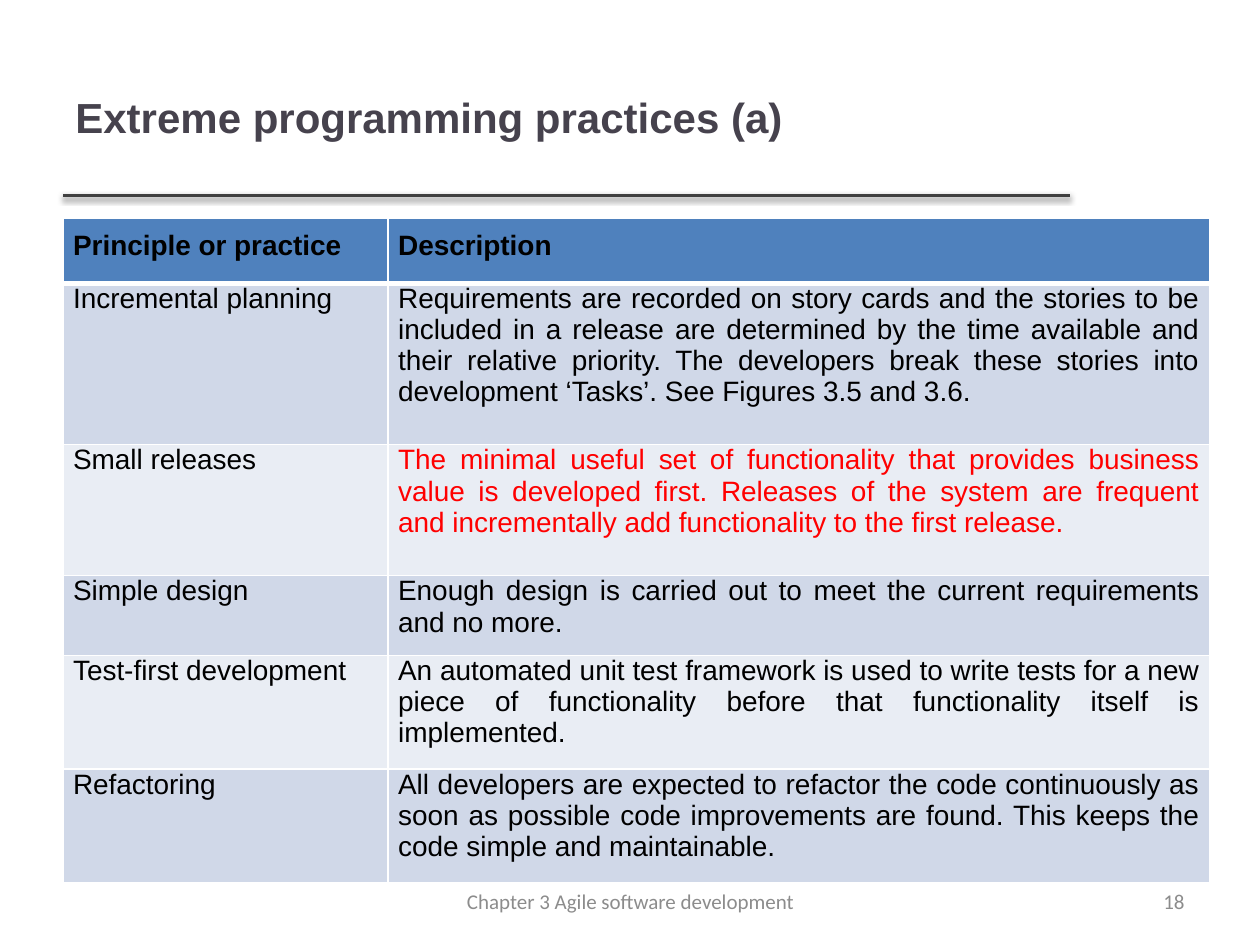
from lxml.etree import SubElement
from pptx import Presentation
from pptx.dml.color import RGBColor
from pptx.enum.shapes import MSO_CONNECTOR
from pptx.enum.text import MSO_ANCHOR, PP_ALIGN
from pptx.oxml.ns import qn
from pptx.util import Inches, Pt

COLORS = {
    "title": "46424D", "rule": "404040", "footer": "8C8C8C",
    "text": "000000", "accent": "FF0000", "border": "FFFFFF",
    "header": "4F81BD", "odd": "D0D8E8", "even": "E9EDF4",
}
LEFT = 0.5
COLS = [2.58, 6.52]
ROWS = [0.52, 1.28, 1.04, 0.57, 0.81, 0.81]
TITLE = {"size": Pt(24), "name": "Arial", "bold": True}
HEADER = {"size": Pt(16), "name": "Arial", "bold": True}
BODY = {"size": Pt(16), "name": "Arial", "bold": False}
FOOTER = {"size": Pt(12), "name": "Calibri", "bold": False}
PRACTICES = [
    ("Principle or practice", "Description"),
    ("Incremental planning",
     "Requirements are recorded on story cards and the stories to be included in a "
     "release are determined by the time available and their relative priority. The "
     "developers break these stories into development ‘Tasks’. See Figures 3.5 and 3.6."),
    ("Small releases",
     "The minimal useful set of functionality that provides business value is developed "
     "first. Releases of the system are frequent and incrementally add functionality to "
     "the first release."),
    ("Simple design",
     "Enough design is carried out to meet the current requirements and no more."),
    ("Test-first development",
     "An automated unit test framework is used to write tests for a new piece of "
     "functionality before that functionality itself is implemented."),
    ("Refactoring",
     "All developers are expected to refactor the code continuously as soon as possible "
     "code improvements are found. This keeps the code simple and maintainable."),
]


def rgb(name):
    return RGBColor.from_string(COLORS[name])


def write(tf, text, style, color, align):
    p = tf.paragraphs[0]
    p.alignment = align
    r = p.add_run()
    r.text = text
    for key, value in style.items():
        setattr(r.font, key, value)
    r.font.color.rgb = rgb(color)


def add_text(s, box, text, style, color, align):
    tf = s.shapes.add_textbox(*map(Inches, box)).text_frame
    tf.word_wrap = True
    tf.vertical_anchor = MSO_ANCHOR.MIDDLE
    write(tf, text, style, color, align)


def add_rule(s, x1, x2, y):
    line = s.shapes.add_connector(
        MSO_CONNECTOR.STRAIGHT, Inches(x1), Inches(y), Inches(x2), Inches(y))
    line.line.color.rgb = rgb("rule")
    line.line.width = Pt(2)
    effects = SubElement(line._element.spPr, qn("a:effectLst"))
    shadow = SubElement(effects, qn("a:outerShdw"), blurRad=str(Pt(3.1)),
                        dist=str(Pt(1.6)), dir="5400000", rotWithShape="0")
    color = SubElement(shadow, qn("a:srgbClr"), val=COLORS["text"])
    SubElement(color, qn("a:alpha"), val="38000")


def set_borders(cell, widths):
    tcPr = cell._tc.get_or_add_tcPr()
    for i, (side, width) in enumerate(widths.items()):
        ln = tcPr.makeelement(qn(f"a:ln{side}"), {"w": str(Pt(width))})
        fill = SubElement(ln, qn("a:solidFill"))
        SubElement(fill, qn("a:srgbClr"), val=COLORS["border"])
        tcPr.insert(i, ln)


def fill_cell(cell, row, col, text):
    head = row == 0
    cell.fill.solid()
    cell.fill.fore_color.rgb = rgb("header" if head else "odd" if row % 2 else "even")
    margins = {"left": 0.08, "right": 0.08, "top": 0.1 if head else 0, "bottom": 0.1}
    for side, value in margins.items():
        setattr(cell, f"margin_{side}", Inches(value))
    set_borders(cell, {"L": 1, "R": 1, "T": 3 if row == 1 else 1, "B": 3 if head else 1})
    color = "accent" if (row, col) == (2, 1) else "text"
    write(cell.text_frame, text, HEADER if head else BODY, color, PP_ALIGN.JUSTIFY)


def add_practices(s, top):
    table = s.shapes.add_table(len(ROWS), len(COLS), Inches(LEFT), Inches(top),
                               Inches(sum(COLS)), Inches(sum(ROWS))).table
    for column, width in zip(table.columns, COLS):
        column.width = Inches(width)
    for row, height in zip(table.rows, ROWS):
        row.height = Inches(height)
    for i, texts in enumerate(PRACTICES):
        for j, text in enumerate(texts):
            fill_cell(table.cell(i, j), i, j, text)


def main():
    prs = Presentation()
    prs.slide_width, prs.slide_height = Inches(10), Inches(7.5)
    s = prs.slides.add_slide(prs.slide_layouts[6])
    add_rule(s, LEFT, 8.49, 1.55)
    add_text(s, (LEFT, 0.3, 7.98, 1.25), "Extreme programming practices (a)",
             TITLE, "title", PP_ALIGN.LEFT)
    add_practices(s, 1.73)
    add_text(s, (7.17, 6.95, 2.33, 0.4), "18", FOOTER, "footer", PP_ALIGN.RIGHT)
    add_text(s, (3.42, 6.95, 3.17, 0.4), "Chapter 3 Agile software development",
             FOOTER, "footer", PP_ALIGN.CENTER)
    prs.save("out.pptx")


if __name__ == "__main__":
    main()
